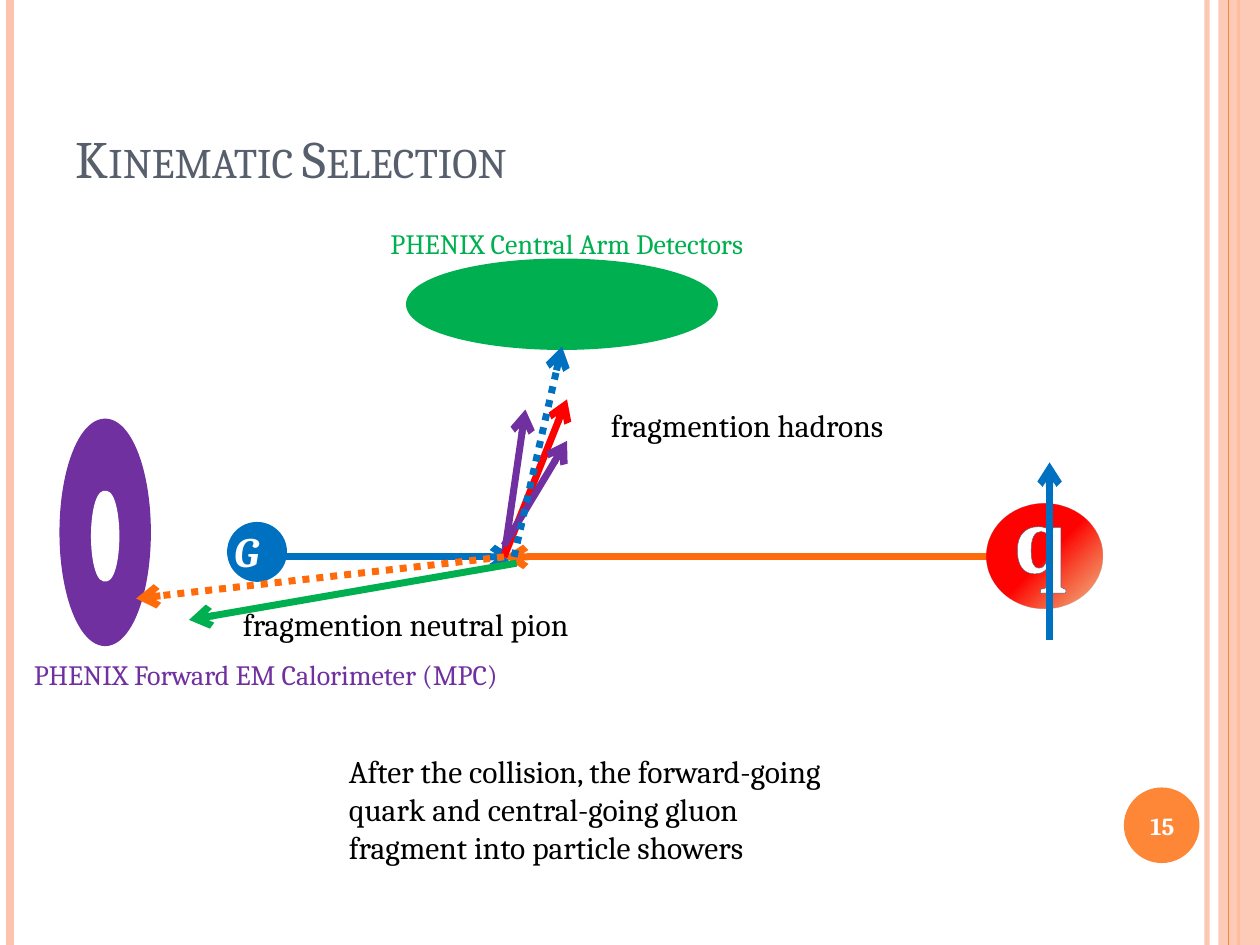
from pptx import Presentation
from pptx.dml.color import RGBColor
from pptx.enum.dml import MSO_LINE
from pptx.enum.shapes import MSO_CONNECTOR, MSO_SHAPE
from pptx.enum.text import MSO_ANCHOR, PP_ALIGN
from pptx.oxml import parse_xml
from pptx.oxml.ns import nsdecls, qn
from pptx.util import Inches, Pt
from lxml.etree import SubElement

BLUE, GREEN, PURPLE, RED = "0070C0", "00B050", "7030A0", "FF0000"
ORANGE, PEACH, AMBER = "FF6B0A", "FEC3AE", "FE8637"
WHITE, BLACK, SLATE = "FFFFFF", "000000", "575F6D"
HIT = (4, 4.42)


def paint(fill, color, alpha=100):
    """Fill with one colour; alpha is the opacity in percent."""
    fill.solid()
    fill.fore_color.rgb = RGBColor.from_string(color)
    if alpha < 100:
        node = fill._xPr.find(qn("a:solidFill"))[0]
        SubElement(node, qn("a:alpha")).set("val", str(alpha * 1000))


def add_line(slide, start, end, color, width=4, alpha=100):
    line = slide.shapes.add_connector(
        MSO_CONNECTOR.STRAIGHT, *[Inches(n) for n in (*start, *end)])
    line.line.width = Pt(width)
    paint(line.line.fill, color, alpha)
    SubElement(line._element.spPr, qn("a:effectLst"))
    return line


def add_arrow(slide, start, end, color, dotted=False):
    line = add_line(slide, start, end, color).line
    if dotted:
        line.dash_style = MSO_LINE.ROUND_DOT
    SubElement(line._get_or_add_ln(), qn("a:tailEnd")).set("type", "arrow")


def add_shape(slide, box, color, kind=MSO_SHAPE.OVAL, edge=0, alpha=100):
    shape = slide.shapes.add_shape(kind, *[Inches(n) for n in box])
    shape.shadow.inherit = False
    paint(shape.fill, color, alpha)
    if edge:
        shape.line.width = Pt(edge)
        paint(shape.line.fill, color)
    else:
        shape.line.fill.background()
    return shape


def add_text(slide, box, text, size, color, bold=False, italic=False,
             align=PP_ALIGN.LEFT, anchor=MSO_ANCHOR.TOP, wrap=True):
    frame = slide.shapes.add_textbox(*[Inches(n) for n in box]).text_frame
    frame.text = text
    frame.word_wrap = wrap
    frame.vertical_anchor = anchor
    par = frame.paragraphs[0]
    par.alignment = align
    run = par.runs[0]
    run.font.name = "Cambria"
    run.font.size = Pt(size)
    run.font.bold = bold
    run.font.italic = italic
    paint(run.font.fill, color)
    return run


def add_frame(slide):
    """Side stripes and the page number."""
    def stripe(x, color, width, alpha=100):
        add_line(slide, (x, 0), (x, 7.5), color, width, alpha)

    stripe(9.58, PEACH, 3, 93)
    stripe(0.08, PEACH, 4.5)
    stripe(9.83, AMBER, 1.5)
    add_shape(slide, (9.67, 0, 0.33, 7.5), PEACH, MSO_SHAPE.RECTANGLE, alpha=87)
    stripe(9.75, AMBER, 0.75)
    add_shape(slide, (8.92, 6.25, 0.6, 0.6), AMBER)
    add_text(slide, (8.89, 6.27, 0.67, 0.57), "15", 14, WHITE, bold=True,
             align=PP_ALIGN.CENTER, anchor=MSO_ANCHOR.MIDDLE)


def add_quark(slide):
    ball = add_shape(slide, (7.83, 4, 0.92, 0.83), RED)
    solid = ball._element.spPr.find(qn("a:solidFill"))
    solid.getparent().replace(solid, parse_xml(
        f'<a:gradFill {nsdecls("a")} rotWithShape="1"><a:gsLst>'
        f'<a:gs pos="0"><a:srgbClr val="{RED}"/></a:gs>'
        f'<a:gs pos="50000"><a:srgbClr val="{RED}"/></a:gs>'
        '<a:gs pos="100000"><a:srgbClr val="E75C01">'
        '<a:alpha val="46000"/></a:srgbClr></a:gs>'
        '</a:gsLst><a:lin ang="2700000" scaled="0"/></a:gradFill>'))
    run = add_text(slide, (7.92, 3.75, 0.69, 1.01), "q", 54, WHITE, bold=True,
                   align=PP_ALIGN.CENTER, wrap=False)
    run.font._element.insert(0, parse_xml(
        f'<a:ln {nsdecls("a")} w="12700"><a:solidFill>'
        '<a:srgbClr val="515D73"/></a:solidFill></a:ln>'))
    add_arrow(slide, (8.33, 5.08), (8.33, 3.67), BLUE)


def add_beams(slide):
    add_arrow(slide, (2.25, 4.42), (4.08, 4.42), BLUE)
    add_arrow(slide, (7.83, 4.42), HIT, ORANGE)
    add_arrow(slide, (4.1, 4.47), (1.5, 4.92), GREEN)
    add_shape(slide, (1.83, 4.17, 0.42, 0.42), BLUE, edge=4)
    add_text(slide, (1.76, 4.12, 1.33, 0.5), "G", 24, WHITE,
             bold=True, italic=True)


def add_arms(slide):
    """The two detectors."""
    add_shape(slide, (3.25, 2.08, 2.42, 0.67), GREEN, edge=4)
    add_text(slide, (3, 1.75, 3.75, 0.37),
             "PHENIX Central Arm Detectors", 16, GREEN)
    add_shape(slide, (0.5, 3.35, 0.67, 1.75), PURPLE, edge=4)
    add_text(slide, (0.17, 5.17, 4.83, 0.37),
             "PHENIX Forward EM Calorimeter (MPC)", 16, PURPLE)
    add_shape(slide, (0.75, 3.92, 0.17, 0.67), WHITE, edge=4)


def add_showers(slide):
    add_arrow(slide, HIT, (4.17, 3.25), PURPLE)
    add_arrow(slide, HIT, (4.5, 3.17), RED)
    add_arrow(slide, (4, 4.33), (4.5, 3.5), PURPLE)
    for box, text in (
        ((1.83, 4.75, 3.5, 0.4), "fragmention neutral pion"),
        ((4.75, 3.17, 2.92, 0.4), "fragmention hadrons"),
        ((2.67, 5.92, 4, 1.31),
         "After the collision, the forward-going quark and central-going "
         "gluon fragment into particle showers"),
    ):
        add_text(slide, box, text, 18, BLACK)


def main():
    deck = Presentation()
    deck.slide_width, deck.slide_height = Inches(10), Inches(7.5)
    slide = deck.slides.add_slide(deck.slide_layouts[6])
    add_frame(slide)
    title = add_text(slide, (0.5, 0.3, 8.17, 1.25), "Kinematic Selection",
                     30, SLATE, anchor=MSO_ANCHOR.BOTTOM)
    title.font._element.set("cap", "small")
    add_beams(slide)
    add_arms(slide)
    add_showers(slide)
    add_quark(slide)
    add_arrow(slide, (4.08, 4.42), (4.46, 2.75), BLUE, dotted=True)
    add_arrow(slide, HIT, (1.08, 4.75), ORANGE, dotted=True)
    deck.save("out.pptx")


if __name__ == "__main__":
    main()
